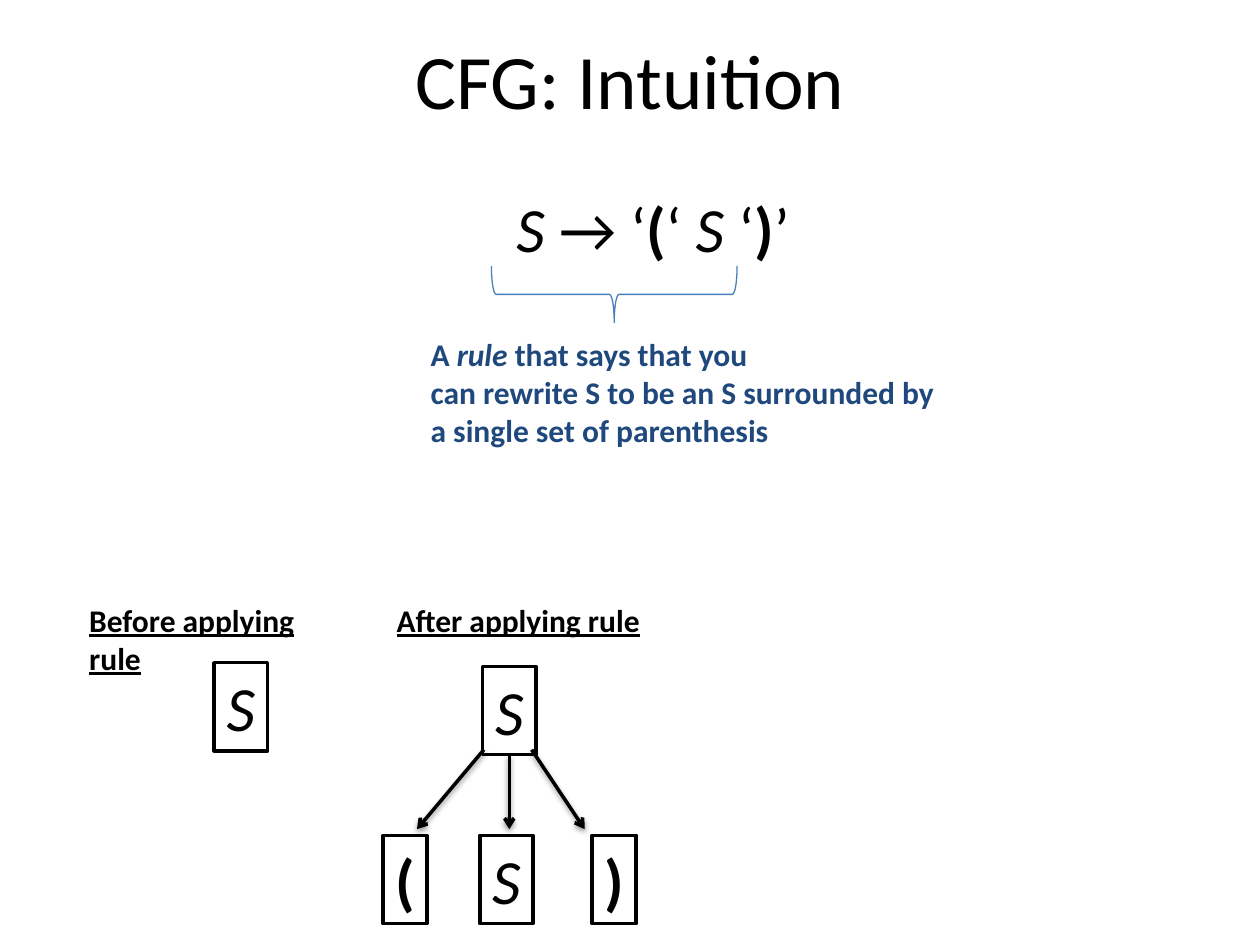
from lxml import etree
from pptx import Presentation
from pptx.dml.color import RGBColor
from pptx.enum.shapes import MSO_CONNECTOR, MSO_SHAPE
from pptx.enum.text import MSO_ANCHOR, MSO_AUTO_SIZE, PP_ALIGN
from pptx.oxml import parse_xml
from pptx.oxml.ns import nsdecls, qn
from pptx.util import Pt

COLORS = {"black": "000000", "white": "FFFFFF", "navy": "1F497D", "brace": "4A7EBB"}
RGB = {name: RGBColor.from_string(value) for name, value in COLORS.items()}
SHADOW = (
    f'<a:effectLst {nsdecls("a")}><a:outerShdw blurRad="{Pt(3.1)}" dist="{Pt(1.6)}" '
    'dir="5400000" rotWithShape="0"><a:srgbClr val="000000"><a:alpha val="38000"/>'
    '</a:srgbClr></a:outerShdw></a:effectLst>'
)


def add_runs(p, runs, size, color):
    for text, style in runs:
        r = p.add_run()
        r.text = text
        r.font.name = "Calibri"
        r.font.size = Pt(size)
        r.font.color.rgb = RGB[color]
        r.font.bold = "b" in style
        r.font.italic = "i" in style
        r.font.underline = "u" in style


def add_text(box, lines, size, color="black"):
    sp = s.shapes.add_textbox(*[Pt(v) for v in box])
    tf = sp.text_frame
    tf.word_wrap = False
    tf.auto_size = MSO_AUTO_SIZE.SHAPE_TO_FIT_TEXT
    for i, runs in enumerate(lines):
        p = tf.add_paragraph() if i else tf.paragraphs[0]
        add_runs(p, runs, size, color)
    return sp


prs = Presentation()
prs.slide_width, prs.slide_height = Pt(720), Pt(540)
s = prs.slides.add_slide(prs.slide_layouts[5])

title = s.shapes.title
title.left, title.top, title.width, title.height = Pt(36), Pt(0), Pt(648), Pt(90)
title.text_frame.vertical_anchor = MSO_ANCHOR.MIDDLE
p = title.text_frame.paragraphs[0]
p.alignment = PP_ALIGN.CENTER
add_runs(p, [("CFG: Intuition", "")], 44, "black")

rule = [("S", "i"), (" → ‘", ""), ("(", "b"), ("‘ ", ""),
        ("S", "i"), (" ‘", ""), (")", "b"), ("’", "")]
add_text((288, 105, 170.6, 50.4), [rule], 36)

explanation = [
    [("A ", "b"), ("rule", "bi"), (" that says that you", "b")],
    [("can rewrite S to be an S surrounded by", "b")],
    [("a single set of parenthesis", "b")],
]
add_text((239, 188, 302.4, 72), explanation, 18, "navy")

brace = s.shapes.add_shape(MSO_SHAPE.LEFT_BRACE, Pt(334.8), Pt(98), Pt(32.4), Pt(140.4))
brace.rotation = 270
brace.shadow.inherit = False
brace.fill.background()
brace.line.color.rgb = RGB["brace"]
brace.line.width = Pt(0.75)

nodes = {}
for name, text, style, left, top, width in [
    ("before", "S", "i", 122.4, 378.7, 30.5),
    ("parent", "S", "i", 275.8, 380.9, 30.5),
    ("child", "S", "i", 274.2, 477.4, 30.5),
    ("open", "(", "b", 218.9, 477.4, 25.2),
    ("close", ")", "b", 338.4, 477.4, 25.2),
]:
    sp = add_text((left, top, width, 50.4), [[(text, style)]], 36)
    sp.fill.solid()
    sp.fill.fore_color.rgb = RGB["white"]
    sp.line.color.rgb = RGB["black"]
    sp.line.width = Pt(2)
    nodes[name] = sp

arrows = []
for x1, y1, x2 in [(276.5, 428.4, 238.3), (303.8, 428.4, 334.1), (291.05, 431.3, 291.05)]:
    c = s.shapes.add_connector(MSO_CONNECTOR.STRAIGHT, Pt(x1), Pt(y1), Pt(x2), Pt(473.8))
    c.line.color.rgb = RGB["black"]
    c.line.width = Pt(2)
    etree.SubElement(c.line._get_or_add_ln(), qn("a:tailEnd"), type="arrow")
    c._element.spPr.append(parse_xml(SHADOW))
    arrows.append(c)
arrows[-1].begin_connect(nodes["parent"], 2)

for text, left, width in [("After applying rule", 219.6, 153.4),
                          ("Before applying rule", 43.9, 164.9)]:
    add_text((left, 339.8, width, 28.8), [[(text, "bu")]], 18)

prs.save("out.pptx")
